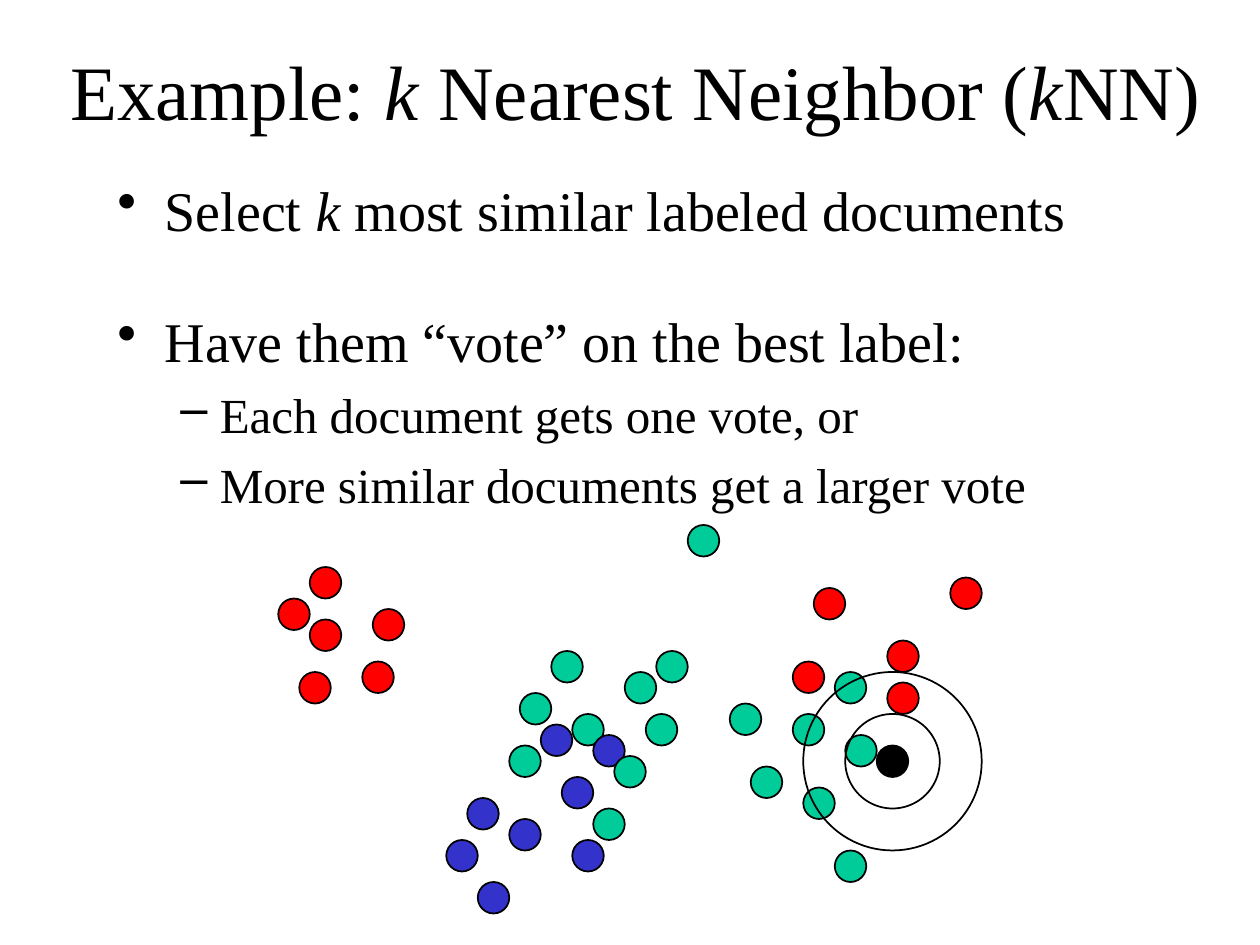
from dataclasses import dataclass

import pptx
import pptx.dml.color
import pptx.enum.shapes
import pptx.enum.text
import pptx.oxml
import pptx.oxml.ns
import pptx.util

Pt = pptx.util.Pt
RGB = pptx.dml.color.RGBColor.from_string


@dataclass(frozen=True)
class Theme:
    font: str = "Times New Roman"
    title: int = 44
    bullet: int = 32
    sub_bullet: int = 28
    black: str = "000000"
    green: str = "00CC99"
    red: str = "FF0000"
    blue: str = "3333CC"


THEME = Theme()
DOT = 18
QUERY_CENTER = (510, 435)
RING_DIAMETERS = (54, 102)

# Level, space before, text; asterisks enclose italics
BULLETS = [
    (0, 0, "Select *k* most similar labeled documents"),
    (0, 36.5, "Have them “vote” on the best label:"),
    (1, 6.5, "Each document gets one vote, or"),
    (1, 6.5, "More similar documents get a larger vote"),
]
# Per level: bullet character, left margin, hanging indent, type size
LEVELS = [
    ("•", 27, 27, THEME.bullet),
    ("–", 58.5, 22.5, THEME.sub_bullet),
]

# Left and top of each document dot, from back to front
DOCUMENTS = [
    (THEME.green, [(357, 384), (369, 408), (429, 438), (417, 402), (459, 450),
                   (453, 408), (483, 420), (477, 486), (477, 384), (315, 372),
                   (297, 396), (327, 408), (375, 372)]),
    (THEME.red, [(453, 378), (507, 390), (177, 324), (207, 378), (213, 348),
                 (177, 354), (159, 342), (171, 384), (465, 336), (507, 366),
                 (543, 330)]),
    (THEME.blue, [(339, 420)]),
    (THEME.green, [(351, 432), (339, 462), (393, 300), (291, 426)]),
    (THEME.blue, [(291, 468), (327, 480), (255, 480), (273, 504), (321, 444),
                  (267, 456), (309, 414)]),
]


def add_text_box(s, left, top, width, height):
    tf = s.shapes.add_textbox(Pt(left), Pt(top), Pt(width), Pt(height)).text_frame
    tf.word_wrap = True
    return tf


def add_runs(p, text, size):
    """Add text to a paragraph, with the parts between asterisks in italics."""
    for i, part in enumerate(text.split("*")):
        r = p.add_run()
        r.text = part
        r.font.name = THEME.font
        r.font.size = Pt(size)
        r.font.italic = i % 2 == 1
        r.font.color.rgb = RGB(THEME.black)


def set_bullet(p, char, margin, hanging):
    pPr = p._p.get_or_add_pPr()
    pPr.set("marL", str(Pt(margin)))
    pPr.set("indent", str(-Pt(hanging)))
    bullet = pptx.oxml.parse_xml(
        f'<a:buChar {pptx.oxml.ns.nsdecls("a")} char="{char}"/>')
    pPr.append(bullet)


def add_title(s, text):
    tf = add_text_box(s, 18, 6.5, 690, 90)
    tf.vertical_anchor = pptx.enum.text.MSO_ANCHOR.MIDDLE
    p = tf.paragraphs[0]
    p.alignment = pptx.enum.text.PP_ALIGN.CENTER
    add_runs(p, text, THEME.title)


def add_bullets(s, bullets):
    tf = add_text_box(s, 60, 90, 612, 207)
    tf.margin_top = Pt(10)
    for i, (level, space, text) in enumerate(bullets):
        p = tf.add_paragraph() if i else tf.paragraphs[0]
        char, margin, hanging, size = LEVELS[level]
        p.level = level
        set_bullet(p, char, margin, hanging)
        p.space_before = Pt(space)
        add_runs(p, text, size)


def add_circle(s, left, top, diameter, fill=None):
    sp = s.shapes.add_shape(pptx.enum.shapes.MSO_SHAPE.OVAL,
                            Pt(left), Pt(top), Pt(diameter), Pt(diameter))
    sp.shadow.inherit = False
    if fill:
        sp.fill.solid()
        sp.fill.fore_color.rgb = RGB(fill)
    else:
        sp.fill.background()
    sp.line.color.rgb = RGB(THEME.black)
    sp.line.width = Pt(1)


def add_centered_circle(s, center, diameter, fill=None):
    x, y = center
    add_circle(s, x - diameter / 2, y - diameter / 2, diameter, fill)


def main():
    prs = pptx.Presentation()
    prs.slide_width, prs.slide_height = Pt(720), Pt(540)
    s = prs.slides.add_slide(prs.slide_layouts[6])

    add_title(s, "Example: *k* Nearest Neighbor (*k*NN)")
    add_bullets(s, BULLETS)
    for color, dots in DOCUMENTS:
        for left, top in dots:
            add_circle(s, left, top, DOT, color)
    add_centered_circle(s, QUERY_CENTER, DOT, THEME.black)
    for diameter in RING_DIAMETERS:
        add_centered_circle(s, QUERY_CENTER, diameter)

    prs.save("out.pptx")


if __name__ == "__main__":
    main()
